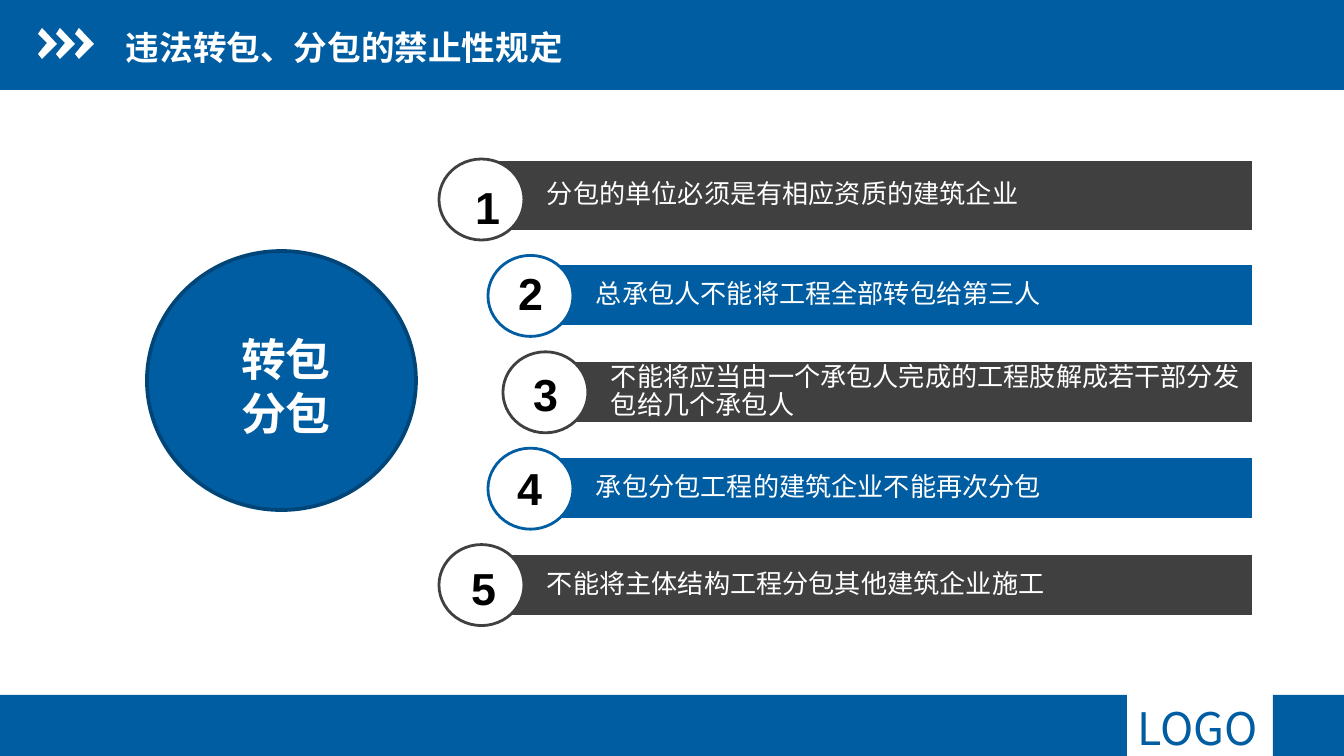
"""Build the slide on rules against illegal subcontracting."""
from pptx import Presentation
from pptx.dml.color import RGBColor
from pptx.enum.shapes import MSO_SHAPE
from pptx.enum.text import MSO_ANCHOR, PP_ALIGN
from pptx.util import Pt

PX = 914400 / 134.4
HUES = {"blue": "005DA2", "navy": "004578", "gray": "404040",
        "white": "FFFFFF", "black": "000000"}


def draw(kind, box, fill, line=None, width=0):
    shape = shapes.add_shape(kind, *[round(n * PX) for n in box])
    shape.shadow.inherit = False
    shape.fill.solid()
    shape.fill.fore_color.rgb = RGBColor.from_string(HUES[fill])
    if line:
        shape.line.color.rgb = RGBColor.from_string(HUES[line])
        shape.line.width = Pt(width)
    else:
        shape.line.fill.background()
    return shape


def write(box, text, size, hue, bold=True, font="Arial", align=PP_ALIGN.LEFT, host=None):
    host = host or shapes.add_textbox(*[round(n * PX) for n in box])
    frame = host.text_frame
    frame.word_wrap = True
    frame.text = text
    for para in frame.paragraphs:
        para.alignment = align
        para.font.name = font
        para.font.size = Pt(size)
        para.font.bold = bold
        para.font.color.rgb = RGBColor.from_string(HUES[hue])
    return frame


deck = Presentation()
deck.slide_width = round(1344 * PX)
deck.slide_height = round(756 * PX)
slide = deck.slides.add_slide(deck.slide_layouts[6])
shapes = slide.shapes

for box in [(0, 0, 1344, 90), (0, 695, 1127, 61), (1273, 695, 71, 61)]:
    draw(MSO_SHAPE.RECTANGLE, box, "blue")

for left in (38, 56, 75):
    edge = [(left + x, y) for x, y in [(4, 28), (19, 44), (4, 59), (0, 54), (9, 43)]]
    path = shapes.build_freeform(left, 34, scale=PX)
    path.add_line_segments(edge, close=True)
    arrow = path.convert_to_shape()
    arrow.shadow.inherit = False
    arrow.fill.solid()
    arrow.fill.fore_color.rgb = RGBColor.from_string(HUES["white"])
    arrow.line.fill.background()

logo = write((1124, 694, 156, 67), "LOGO", 24, "blue", False, "Noto Sans CJK SC")
logo.word_wrap = False
title = write((126, 19, 476, 56), "违法转包、分包的禁止性规定", 18, "white")
title.margin_left = title.margin_right = 0
title.vertical_anchor = MSO_ANCHOR.MIDDLE

rules = [
    ("分包的单位必须是有相应资质的建筑企业", 439, 159, 73, 462, 173),
    ("总承包人不能将工程全部转包给第三人", 488, 263, 64, 505, 259),
    ("不能将应当由一个承包人完成的工程肢解成若干部分发包给几个承包人", 503, 360, 64, 520, 360),
    ("承包分包工程的建筑企业不能再次分包", 488, 456, 64, 504, 454),
    ("不能将主体结构工程分包其他建筑企业施工", 439, 553, 64, 458, 554),
]
for i, (text, left, top, high, numx, numy) in enumerate(rules):
    hue = "blue" if i % 2 else "gray"
    start = left + 42
    bar = draw(MSO_SHAPE.RECTANGLE, (start, top, 1254 - start, high), hue, "white", 2)
    frame = write(None, text, 14, "white", False, host=bar)
    frame.vertical_anchor = MSO_ANCHOR.MIDDLE
    frame.margin_left = round(66 * PX)
    frame.margin_right = frame.margin_top = frame.margin_bottom = round(5 * PX)
    frame.paragraphs[0].line_spacing = 0.9
    frame.paragraphs[0].space_after = Pt(5)
    draw(MSO_SHAPE.OVAL, (left, 159 + 96.4 * i, 85, 81), "white", hue, 1.5)
    write((numx, numy, 38, 67), str(i + 1), 24, "black")

draw(MSO_SHAPE.OVAL, (147, 251, 269, 259), "blue", "navy", 2)
write((184, 325, 204, 122), "转包\n分包", 24, "white", align=PP_ALIGN.CENTER)

deck.save("out.pptx")
